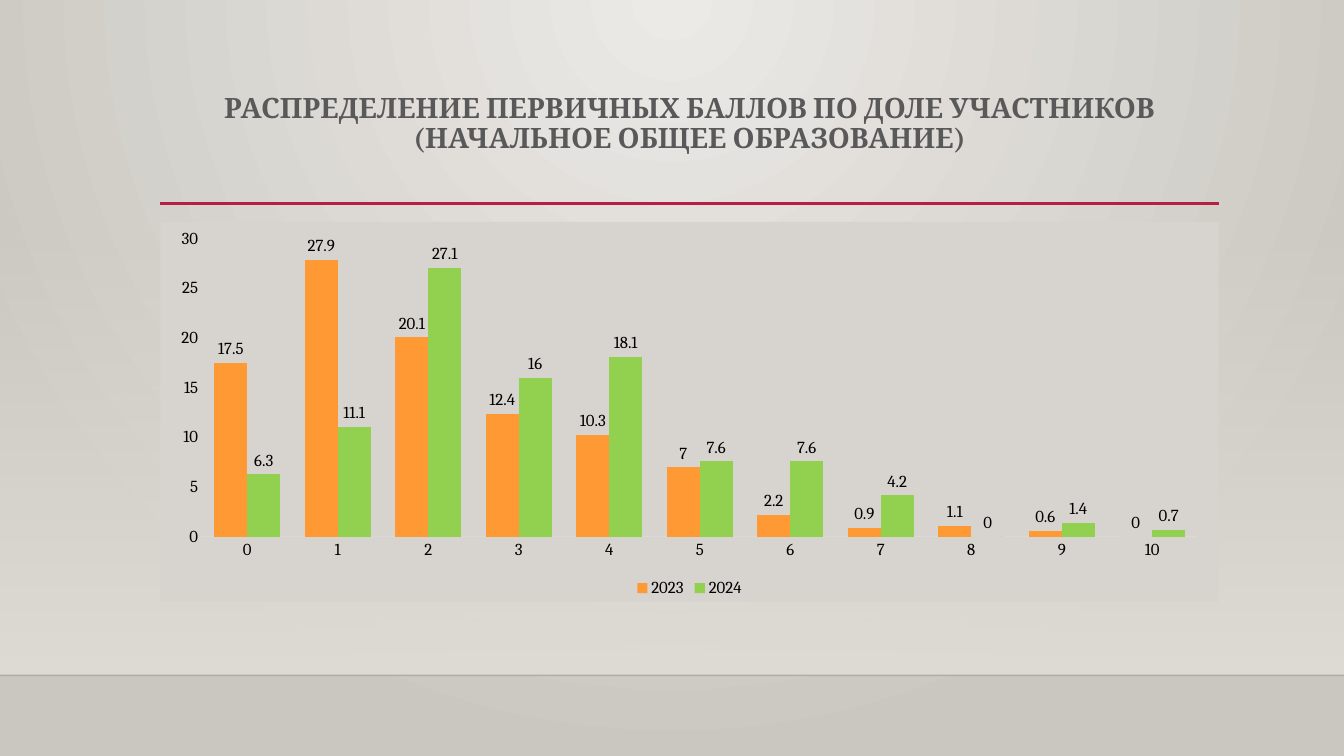
import pptx
import pptx.chart.data
import pptx.dml.color
import pptx.enum.chart
import pptx.enum.shapes
import pptx.enum.text
import pptx.oxml
import pptx.oxml.ns
import pptx.util

Pt = pptx.util.Pt
RGB = pptx.dml.color.RGBColor
qn = pptx.oxml.ns.qn

LIGHT = RGB(0xEC, 0xEA, 0xE7)
SHADE = RGB(0xCA, 0xC7, 0xC1)
SAND = RGB(0xDF, 0xDB, 0xD5)
PANEL = RGB(0xD7, 0xD3, 0xCF)
RED = RGB(0xB7, 0x1E, 0x42)
GRAY = RGB(0x59, 0x59, 0x59)
PALE = RGB(0xD9, 0xD9, 0xD9)
BLACK = RGB(0, 0, 0)
ORANGE = RGB(0xFF, 0x99, 0x33)
GREEN = RGB(0x92, 0xD0, 0x50)

FONT = "Cambria"
WIDE, HIGH = 960, 540
LEFT, SPAN = 114.5, 756
FLOOR = 482.4

TITLE = ("РАСПРЕДЕЛЕНИЕ ПЕРВИЧНЫХ БАЛЛОВ ПО ДОЛЕ УЧАСТНИКОВ\v"
         "(НАЧАЛЬНОЕ ОБЩЕЕ ОБРАЗОВАНИЕ)")
SCORES = [
    ("2023", ORANGE, (17.5, 27.9, 20.1, 12.4, 10.3, 7, 2.2, 0.9, 1.1, 0.6, 0)),
    ("2024", GREEN, (6.3, 11.1, 27.1, 16, 18.1, 7.6, 7.6, 4.2, 0, 1.4, 0.7)),
]


def set_font(font, size, color, bold=False):
    font.name, font.size, font.bold = FONT, Pt(size), bold
    font.color.rgb = color


def set_alpha(color, share):
    """Make an a:srgbClr element see-through; share is the opacity in percent."""
    alpha = color.makeelement(qn("a:alpha"), {"val": str(share * 1000)})
    color.append(alpha)


def set_stops(fill, first, last):
    fill.gradient()
    for stop, color in zip(fill.gradient_stops, (first, last)):
        stop.color.rgb = color


def paint_back(slide):
    """Fill the background with a glow from the middle of the top edge."""
    set_stops(slide.background.fill, LIGHT, SHADE)
    grad = next(slide.element.iter(qn("a:gradFill")))
    grad.replace(grad.find(qn("a:lin")), pptx.oxml.parse_xml(
        f'<a:path {pptx.oxml.ns.nsdecls("a")} path="circle">'
        '<a:fillToRect l="43000" t="0" r="43000" b="100000"/></a:path>'))


def add_wall(slide, top):
    """Add the band that fades in down to the floor line."""
    wall = slide.shapes.add_shape(
        pptx.enum.shapes.MSO_SHAPE.RECTANGLE, 0, Pt(top), Pt(WIDE), Pt(FLOOR - top))
    wall.shadow.inherit = False
    wall.line.fill.background()
    set_stops(wall.fill, SAND, SAND)
    wall.fill.gradient_angle = 270
    set_alpha(next(wall.element.iter(qn("a:srgbClr"))), 0)


def add_rule(slide, left, right, y, color, width):
    rule = slide.shapes.add_connector(
        pptx.enum.shapes.MSO_CONNECTOR.STRAIGHT, Pt(left), Pt(y), Pt(right), Pt(y))
    rule.line.color.rgb = color
    rule.line.width = Pt(width)
    props = rule.element.spPr
    props.append(props.makeelement(qn("a:effectLst"), {}))
    return rule


def set_title(slide):
    title = slide.shapes.title
    title.left, title.top = Pt(LEFT), Pt(63.4)
    title.width, title.height = Pt(SPAN), Pt(82.8)
    frame = title.text_frame
    frame.text = TITLE
    frame.word_wrap = True
    frame.auto_size = pptx.enum.text.MSO_AUTO_SIZE.NONE
    frame.vertical_anchor = pptx.enum.text.MSO_ANCHOR.TOP
    para = frame.paragraphs[0]
    para.alignment = pptx.enum.text.PP_ALIGN.CENTER
    para.line_spacing = 0.9
    set_font(para.font, 20, GRAY, bold=True)


def style_axis(axis):
    axis.has_major_gridlines = False
    axis.major_tick_mark = pptx.enum.chart.XL_TICK_MARK.NONE
    axis.minor_tick_mark = pptx.enum.chart.XL_TICK_MARK.NONE
    set_font(axis.tick_labels.font, 12, BLACK)


def style_bars(bars, color):
    bars.smooth = False
    bars.invert_if_negative = False
    bars.format.fill.solid()
    bars.format.fill.fore_color.rgb = color
    labels = bars.data_labels
    labels.show_value = True
    labels.position = pptx.enum.chart.XL_LABEL_POSITION.OUTSIDE_END
    set_font(labels.font, 12, BLACK)


def fill_chart(chart, color):
    area = pptx.oxml.parse_xml(
        f'<c:spPr {pptx.oxml.ns.nsdecls("c", "a")}><a:solidFill>'
        f'<a:srgbClr val="{color}"/></a:solidFill>'
        '<a:ln><a:noFill/></a:ln></c:spPr>')
    chart.element.find(qn("c:chart")).addnext(area)


def add_scores(slide):
    data = pptx.chart.data.CategoryChartData()
    data.categories = [str(score) for score in range(11)]
    for name, _, values in SCORES:
        data.add_series(name, values)
    chart = slide.shapes.add_chart(
        pptx.enum.chart.XL_CHART_TYPE.COLUMN_CLUSTERED,
        Pt(LEFT), Pt(158.4), Pt(SPAN), Pt(271.4), data).chart
    set_font(chart.font, 12, BLACK)
    fill_chart(chart, PANEL)
    chart.has_title = False
    chart.has_legend = True
    chart.legend.position = pptx.enum.chart.XL_LEGEND_POSITION.BOTTOM
    chart.legend.include_in_layout = False
    set_font(chart.legend.font, 12, BLACK)

    plot = chart.plots[0]
    plot.gap_width, plot.overlap = 75, 0
    plot.vary_by_categories = False
    for bars, (_, color, _) in zip(plot.series, SCORES):
        style_bars(bars, color)

    style_axis(chart.category_axis)
    chart.category_axis.format.line.color.rgb = PALE
    chart.category_axis.format.line.width = Pt(0.75)
    scale = chart.value_axis
    style_axis(scale)
    scale.format.line.fill.background()
    scale.minimum_scale, scale.maximum_scale, scale.major_unit = 0, 30, 5


def main():
    deck = pptx.Presentation()
    deck.slide_width, deck.slide_height = Pt(WIDE), Pt(HIGH)
    slide = deck.slides.add_slide(deck.slide_layouts[5])
    paint_back(slide)
    add_wall(slide, 159)
    floor = add_rule(slide, 0, WIDE, FLOOR, BLACK, 1)
    set_alpha(next(floor.element.iter(qn("a:srgbClr"))), 20)
    add_rule(slide, LEFT, LEFT + SPAN, 145.4, RED, 2.5)
    set_title(slide)
    add_scores(slide)
    deck.save("out.pptx")


if __name__ == "__main__":
    main()
